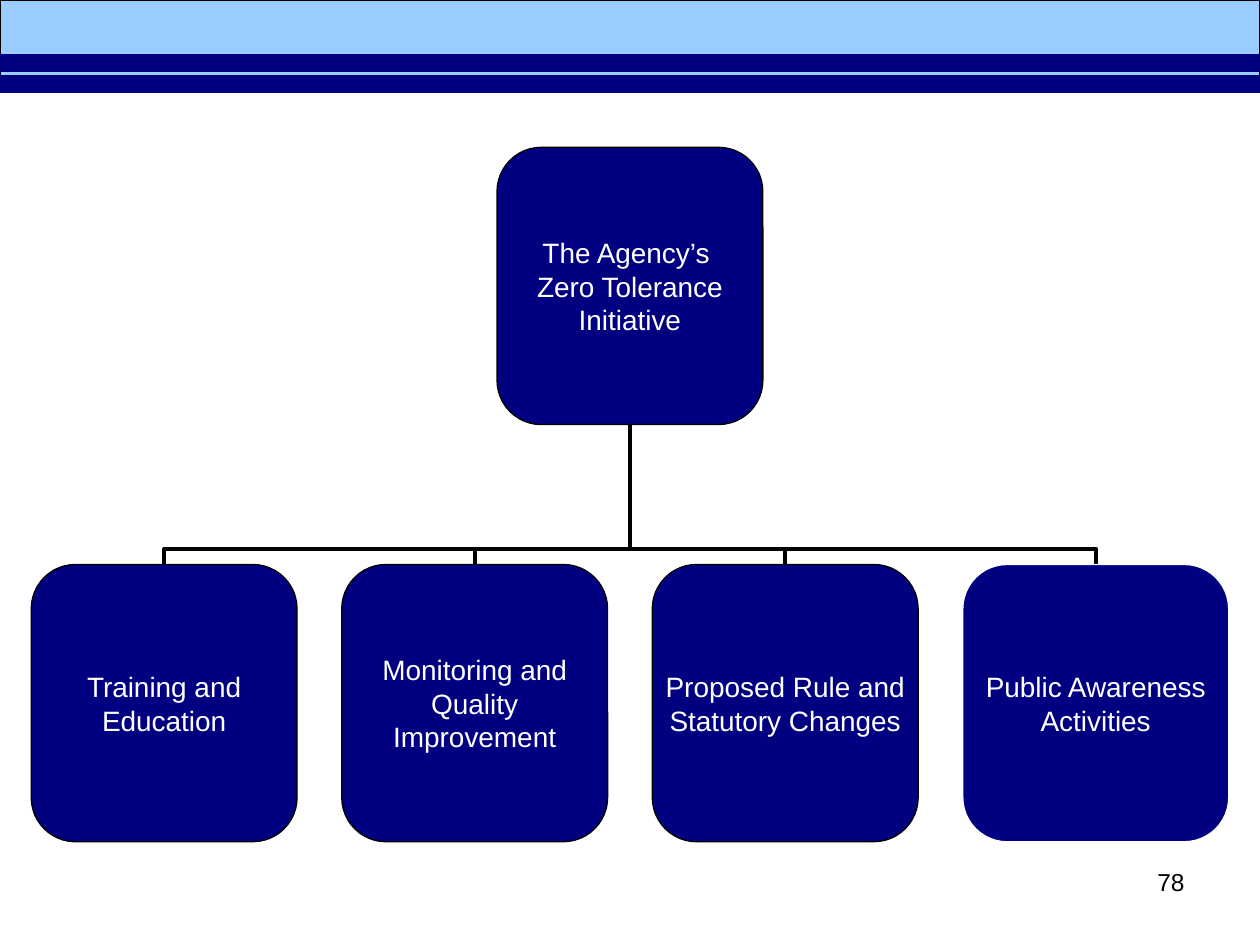
from dataclasses import dataclass

from lxml import etree
from pptx import Presentation
from pptx import util as u
from pptx.dml.color import RGBColor
from pptx.enum import shapes, text
from pptx.oxml import ns

NAVY = RGBColor(0x00, 0x00, 0x80)
SKY = RGBColor(0x99, 0xCC, 0xFF)
BLACK = RGBColor(0x00, 0x00, 0x00)
WHITE = RGBColor(0xFF, 0xFF, 0xFF)
FONT = "Arial"

SLIDE_WIDTH = 25.4
BOX_WIDTH, BOX_HEIGHT = 5.36, 5.59
PARENT_TOP, CHILD_TOP = 2.97, 11.38
MARGIN = 0.63
ELBOW_SHARE = 0.113  # height of the shared bar above the children


@dataclass
class Box:
    label: str
    left: float
    top: float
    outline: RGBColor = BLACK

    @property
    def center(self) -> float:
        return self.left + BOX_WIDTH / 2


def format_paragraph(paragraph, size: int, color: RGBColor, alignment) -> None:
    paragraph.alignment = alignment
    for run in paragraph.runs:
        run.font.name = FONT
        run.font.size = u.Pt(size)
        run.font.color.rgb = color


def style_shape(shape, fill: RGBColor, outline: RGBColor) -> None:
    shape.shadow.inherit = False
    shape.fill.solid()
    shape.fill.fore_color.rgb = fill
    shape.line.color.rgb = outline
    shape.line.width = u.Pt(0.75)


def draw_connector(slide, kind, begin_x: float, begin_y: float, end_x: float,
                   end_y: float, color: RGBColor, width: float):
    connector = slide.shapes.add_connector(
        kind, u.Cm(begin_x), u.Cm(begin_y), u.Cm(end_x), u.Cm(end_y))
    connector.line.color.rgb = color
    connector.line.width = u.Pt(width)
    etree.SubElement(connector._element.spPr, ns.qn("a:effectLst"))
    return connector


def draw_branch(slide, child: Box, parent: Box) -> None:
    """Elbow from the top of the child to the bottom of the parent."""
    parent_bottom = parent.top + BOX_HEIGHT
    middle_x = (child.center + parent.center) / 2
    middle_y = (child.top + parent_bottom) / 2
    half_rise = (child.top - parent_bottom) / 2
    half_span = abs(child.center - parent.center) / 2
    on_left = child.center < parent.center
    reach = half_rise if on_left else -half_rise

    # The elbow is laid out sideways, then turned upright about its middle
    connector = draw_connector(
        slide, shapes.MSO_CONNECTOR.ELBOW, middle_x - reach, middle_y - half_span,
        middle_x + reach, middle_y + half_span, BLACK, 2.25)
    properties = connector._element.spPr
    properties.find(ns.qn("a:xfrm")).set("rot", str((270 if on_left else 90) * 60000))
    adjustments = properties.find(ns.qn("a:prstGeom")).find(ns.qn("a:avLst"))
    etree.SubElement(adjustments, ns.qn("a:gd"), name="adj1",
                     fmla=f"val {round(ELBOW_SHARE * 100000)}")


def draw_box(slide, box: Box) -> None:
    shape = slide.shapes.add_shape(
        shapes.MSO_SHAPE.ROUNDED_RECTANGLE, u.Cm(box.left), u.Cm(box.top),
        u.Cm(BOX_WIDTH), u.Cm(BOX_HEIGHT))
    style_shape(shape, NAVY, box.outline)
    frame = shape.text_frame
    frame.margin_left = frame.margin_right = frame.margin_top = frame.margin_bottom = 0
    frame.word_wrap = True
    frame.vertical_anchor = text.MSO_ANCHOR.MIDDLE
    frame.text = box.label
    for paragraph in frame.paragraphs:
        format_paragraph(paragraph, 16, WHITE, text.PP_ALIGN.CENTER)


def draw_header(slide) -> None:
    band = slide.shapes.add_shape(
        shapes.MSO_SHAPE.RECTANGLE, 0, 0, u.Cm(SLIDE_WIDTH), u.Cm(1.7))
    style_shape(band, SKY, BLACK)
    for stripe_y in (1.7, 1.27):
        draw_connector(slide, shapes.MSO_CONNECTOR.STRAIGHT, 0, stripe_y,
                       SLIDE_WIDTH, stripe_y, NAVY, 10.25)


def draw_page_number(slide, number: str) -> None:
    box = slide.shapes.add_textbox(u.Cm(18.2), u.Cm(17.35), u.Cm(5.93), u.Cm(1.32))
    box.text_frame.word_wrap = True
    box.text_frame.text = number
    format_paragraph(box.text_frame.paragraphs[0], 14, BLACK, text.PP_ALIGN.RIGHT)


def main() -> None:
    presentation = Presentation()
    presentation.slide_width = u.Cm(SLIDE_WIDTH)
    presentation.slide_height = u.Cm(19.05)
    slide = presentation.slides.add_slide(presentation.slide_layouts[6])

    draw_header(slide)
    draw_page_number(slide, "78")

    # Organisation chart: one parent above a row of evenly spaced children
    parent = Box("The Agency’s \nZero Tolerance Initiative",
                 (SLIDE_WIDTH - BOX_WIDTH) / 2, PARENT_TOP)
    labels = ["Training and Education", "Monitoring and Quality Improvement",
              "Proposed Rule and Statutory Changes", "Public Awareness Activities"]
    pitch = (SLIDE_WIDTH - 2 * MARGIN - BOX_WIDTH) / (len(labels) - 1)
    children = [Box(label, MARGIN + index * pitch, CHILD_TOP)
                for index, label in enumerate(labels)]
    children[-1].outline = WHITE

    for child in reversed(children):
        draw_branch(slide, child, parent)
    for box in [parent, *children]:
        draw_box(slide, box)

    presentation.save("out.pptx")


if __name__ == "__main__":
    main()
